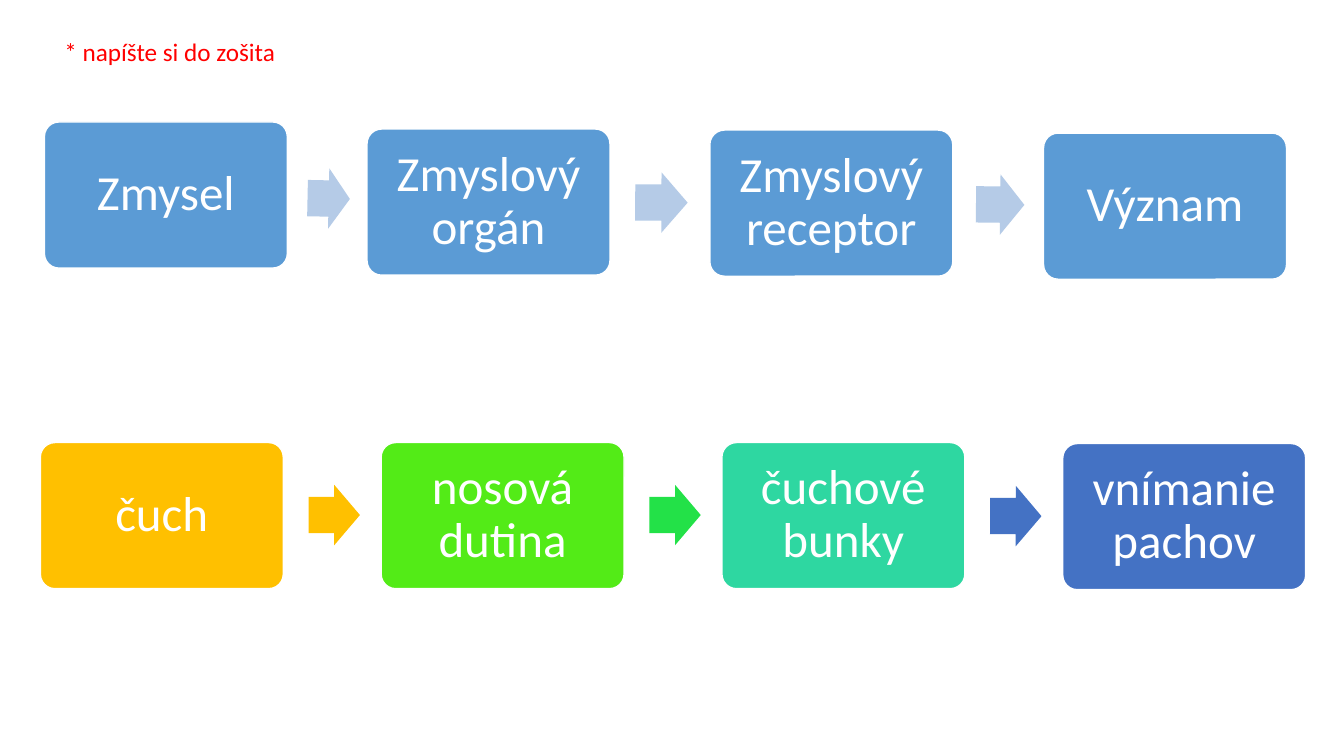
from dataclasses import dataclass

from pptx import Presentation
from pptx.dml.color import RGBColor
from pptx.enum.shapes import MSO_SHAPE
from pptx.enum.text import MSO_ANCHOR, MSO_AUTO_SIZE, PP_ALIGN
from pptx.util import Emu, Pt

ROUNDED = MSO_SHAPE.ROUNDED_RECTANGLE
ARROW = MSO_SHAPE.RIGHT_ARROW
MIDDLE = MSO_ANCHOR.MIDDLE
CENTER = PP_ALIGN.CENTER
FIT_TEXT = MSO_AUTO_SIZE.SHAPE_TO_FIT_TEXT

EMU_PER_PX = 9144  # 100 px to the inch
BOX_WIDTH, BOX_HEIGHT = 241, 145
ARROW_HEIGHT = 60
BOX_INSET = 19


@dataclass(frozen=True)
class Theme:
    font: str = "Calibri"
    box_size: int = 35
    note_size: int = 18
    white: str = "FFFFFF"
    note: str = "FF0000"
    blue: str = "5B9BD5"
    pale_blue: str = "B5CBE7"
    amber: str = "FFC000"
    lime: str = "53EB17"
    green: str = "23E148"
    teal: str = "2ED7A1"
    royal: str = "4472C4"


def px(value):
    return Emu(value * EMU_PER_PX)


class FlowSlide:
    def __init__(self, slide, theme):
        self.slide = slide
        self.theme = theme

    def set_font(self, paragraph, size, color):
        paragraph.font.name = self.theme.font
        paragraph.font.size = Pt(size)
        paragraph.font.color.rgb = RGBColor.from_string(color)

    def preset(self, kind, left, top, width, height, color):
        shape = self.slide.shapes.add_shape(kind, px(left), px(top), px(width), px(height))
        shape.shadow.inherit = False
        shape.fill.solid()
        shape.fill.fore_color.rgb = RGBColor.from_string(color)
        return shape

    def box(self, text, left, top, color):
        shape = self.preset(ROUNDED, left, top, BOX_WIDTH, BOX_HEIGHT, color)
        shape.adjustments[0] = 0.1
        shape.line.color.rgb = RGBColor.from_string(self.theme.white)
        shape.line.width = Pt(1)
        frame = shape.text_frame
        frame.word_wrap = True
        frame.vertical_anchor = MIDDLE
        frame.margin_left = frame.margin_right = px(BOX_INSET)
        frame.margin_top = frame.margin_bottom = px(BOX_INSET)
        paragraph = frame.paragraphs[0]
        paragraph.text = text
        paragraph.alignment = CENTER
        paragraph.line_spacing = 0.9
        self.set_font(paragraph, self.theme.box_size, self.theme.white)

    def arrow(self, left, top, width, color, rotation=0):
        shape = self.preset(ARROW, left, top, width, ARROW_HEIGHT, color)
        shape.adjustments[0] = 0.6
        shape.adjustments[1] = 0.5
        shape.line.fill.background()
        shape.rotation = rotation

    def note(self, text, left, top, width, height):
        shape = self.slide.shapes.add_textbox(px(left), px(top), px(width), px(height))
        frame = shape.text_frame
        frame.word_wrap = False
        frame.auto_size = FIT_TEXT
        paragraph = frame.paragraphs[0]
        paragraph.text = text
        self.set_font(paragraph, self.theme.note_size, self.theme.note)


def main():
    presentation = Presentation()
    presentation.slide_width = px(1333)
    presentation.slide_height = px(750)
    theme = Theme()
    flow = FlowSlide(presentation.slides.add_slide(presentation.slide_layouts[6]), theme)

    flow.note("* napíšte si do zošita", 54, 31, 232, 40)

    # Upper row: the general terms
    for text, left, top in (
        ("Zmysel", 44, 121),
        ("Zmyslový orgán", 364, 128),
        ("Zmyslový receptor", 704, 129),
        ("Význam", 1035, 132),
    ):
        flow.box(text, left, top, theme.blue)
    for left, top, width, rotation in (
        (305, 167, 42, 1.2),
        (630, 171, 52, 0.2),
        (968, 173, 48, 0.7),
    ):
        flow.arrow(left, top, width, theme.pale_blue, rotation)

    # Lower row: the sense of smell, evenly spaced
    step = 338
    for index, (text, top, color) in enumerate((
        ("čuch", 439, theme.amber),
        ("nosová dutina", 439, theme.lime),
        ("čuchové bunky", 439, theme.teal),
        ("vnímanie pachov", 440, theme.royal),
    )):
        flow.box(text, 40 + index * step, top, color)
    for index, (top, color, rotation) in enumerate((
        (481, theme.amber, 0),
        (481, theme.green, 0),
        (482, theme.royal, 0.2),
    )):
        flow.arrow(306 + index * step, top, 51, color, rotation)

    presentation.save("out.pptx")


if __name__ == "__main__":
    main()
